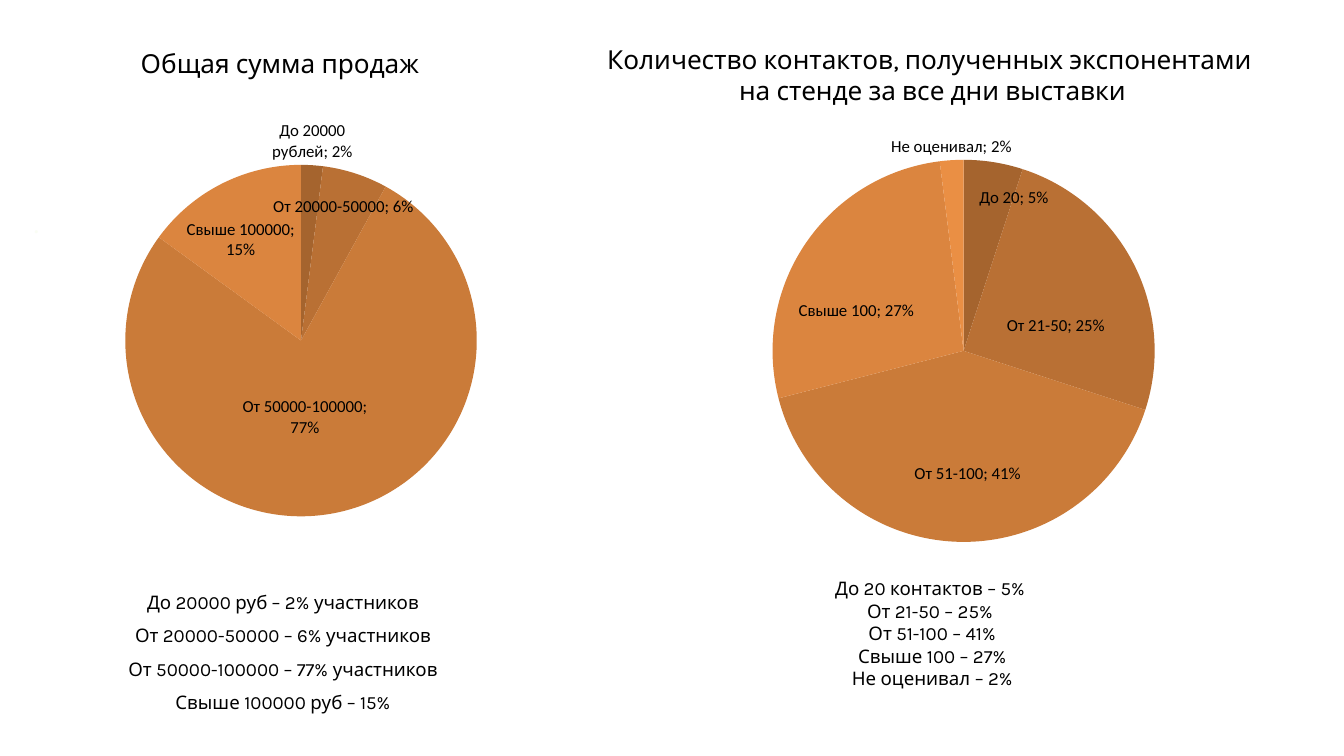
from pptx import Presentation, util as u
from pptx.chart.data import CategoryChartData
from pptx.dml.color import RGBColor
from pptx.enum import chart as ch, text as tx
from pptx.oxml import parse_xml
from pptx.oxml.ns import nsdecls

Pt = u.Pt


class Theme:
    heading_font, chart_font, mark_font = "Karla", "Calibri", "Lato"
    heading, body, label, mark = 28, 20, 18, 25.5
    ink, faint = "000000", "FAFDF4"
    slices = ["A5642E", "B97034", "CA7B39", "DB853F", "EA8F44"]


# Content: places are left, top, width, height in points
HEADINGS = [
    ((77.8, 51.1, 444.2, 33.8), ["Общая сумма продаж"]),
    ((646.6, 46.1, 704.9, 67.7),
     ["Количество контактов, полученных экспонентами \vна стенде за все дни выставки"]),
]
SUMMARIES = [
    ((66.2, 620.6, 473.8, 141.1), 1.5,
     ["До 20000 руб – 2% участников", "От 20000-50000 – 6% участников",
      "От 50000-100000 – 77% участников", "Свыше 100000 руб – 15%"]),
    ((761.8, 618.5, 473.8, 121), 1,
     ["До 20 контактов – 5% ", "От 21-50 – 25% ", "От 51-100 – 41%",
      "Свыше 100 – 27%", "Не оценивал – 2%"]),
]
MARK = ((36, 224.6, 612.7, 61.9), ["."])

# Each slice: name, share, label shift from the slice centre (None = outside)
PIES = [
    {"place": (36, 116.6, 545.8, 491.8), "plot": (0.18, 0.12, 0.69, 0.77),
     "slices": [("До 20000 рублей", 0.02, None),
                ("От 20000-50000", 0.06, (0.03, -0.11)),
                ("От 50000-100000", 0.77, (-0.03, -0.02)),
                ("Свыше 100000", 0.15, (-0.04, -0.05))]},
    {"place": (645.8, 135.4, 758.2, 486), "plot": (0.24, 0.07, 0.54, 0.85),
     "slices": [("До 20", 0.05, (0.05, -0.13)),
                ("От 21-50", 0.25, (0.01, 0.04)),
                ("От 51-100", 0.41, (0.01, 0.06)),
                ("Свыше 100", 0.27, (-0.04, 0.03)),
                ("Не оценивал", 0.02, None)]},
]


def add_text(page, place, lines, size, font=Theme.heading_font, color=Theme.ink,
             align=tx.PP_ALIGN.CENTER, spacing=1):
    frame = page.shapes.add_textbox(*map(Pt, place)).text_frame
    frame.word_wrap = True
    frame.margin_left = frame.margin_right = frame.margin_top = frame.margin_bottom = 0
    frame.text = "\n".join(lines)
    for para in frame.paragraphs:
        para.alignment, para.line_spacing = align, spacing
        for span in para.runs:
            span.font.size, span.font.name = Pt(size), font
            span.font.color.rgb = RGBColor.from_string(color)


def layout_xml(inner):
    return f'<c:layout {nsdecls("c")}><c:manualLayout>{inner}</c:manualLayout></c:layout>'


def slice_label(index, shift):
    x, y = shift
    layout = layout_xml(f'<c:x val="{x}"/><c:y val="{y}"/>')
    return parse_xml(
        f'<c:dLbl {nsdecls("c")}><c:idx val="{index}"/>{layout}'
        '<c:numFmt formatCode="0%" sourceLinked="0"/><c:dLblPos val="ctr"/>'
        '<c:showLegendKey val="0"/><c:showVal val="1"/><c:showCatName val="1"/>'
        '<c:showSerName val="0"/><c:showPercent val="0"/><c:showBubbleSize val="0"/>'
        '<c:separator>; </c:separator></c:dLbl>')


def add_pie(page, place, plot, slices):
    data = CategoryChartData(number_format="0%")
    data.categories = [name for name, _, _ in slices]
    data.add_series("Series 1", [share for _, share, _ in slices])
    chart = page.shapes.add_chart(ch.XL_CHART_TYPE.PIE, *map(Pt, place), data).chart
    chart.has_legend = chart.has_title = False
    chart.font.size, chart.font.name = Pt(Theme.label), Theme.chart_font
    chart.font.color.rgb = RGBColor.from_string(Theme.ink)
    chart.plots[0].vary_by_categories = True

    # Fixed pie position inside the chart frame
    x, y, w, h = plot
    area = chart.plots[0]._element.getparent()
    for old in area.xpath("c:layout"):
        area.remove(old)
    area.insert(0, parse_xml(layout_xml(
        '<c:layoutTarget val="inner"/><c:xMode val="edge"/><c:yMode val="edge"/>'
        f'<c:x val="{x}"/><c:y val="{y}"/><c:w val="{w}"/><c:h val="{h}"/>')))

    # Labels: outside by default, shifted from the centre where given
    series = chart.plots[0].series[0]
    labels = series.data_labels
    labels.show_value = labels.show_category_name = True
    labels.show_percentage = labels.show_legend_key = False
    labels.number_format, labels.number_format_is_linked = "0%", False
    labels.position = ch.XL_LABEL_POSITION.OUTSIDE_END
    labels.font.size, labels.font.name = Pt(Theme.label), Theme.chart_font
    labels.font.color.rgb = RGBColor.from_string(Theme.ink)
    separator = parse_xml(f'<c:separator {nsdecls("c")}>; </c:separator>')
    last_flag = labels._element.xpath("c:showBubbleSize | c:showPercent")[-1]
    last_flag.addnext(separator)
    position = 0
    for index, (_, _, shift) in enumerate(slices):
        fill = series.points[index].format.fill
        fill.solid()
        fill.fore_color.rgb = RGBColor.from_string(Theme.slices[index])
        if shift:
            labels._element.insert(position, slice_label(index, shift))
            position += 1


def main():
    deck = Presentation()
    deck.slide_width, deck.slide_height = Pt(1440), Pt(810)
    page = deck.slides.add_slide(deck.slide_layouts[6])

    # Faint mark at the left edge
    place, lines = MARK
    add_text(page, place, lines, Theme.mark, Theme.mark_font, Theme.faint,
             tx.PP_ALIGN.LEFT)

    # Headings, pies and summaries
    for place, lines in HEADINGS:
        add_text(page, place, lines, Theme.heading)
    for pie in PIES:
        add_pie(page, **pie)
    for place, spacing, lines in SUMMARIES:
        add_text(page, place, lines, Theme.body, spacing=spacing)

    deck.save("out.pptx")


if __name__ == "__main__":
    main()
